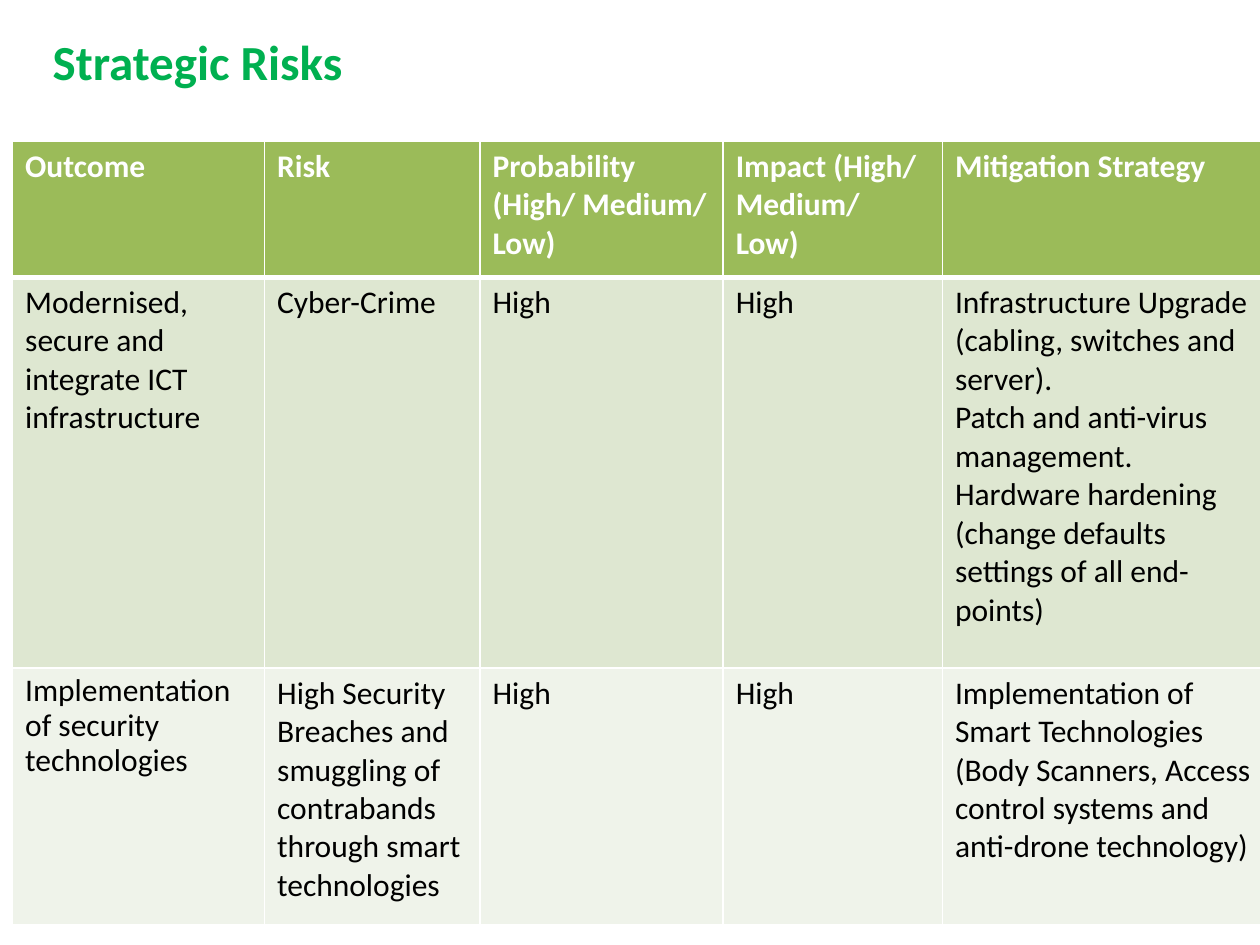
import pptx
import pptx.dml.color
import pptx.enum.text
import pptx.oxml
import pptx.oxml.ns
import pptx.util

SLIDE_WIDTH = pptx.util.Inches(10)
SLIDE_HEIGHT = pptx.util.Inches(7.5)
FONT_NAME = "Calibri"
COLUMN_SHARES = [0.2, 0.171, 0.193, 0.174, 0.262]
ROW_INCHES = [1.08, 3.1, 2.04]
ROW_FILLS = ["9BBB59", "DEE7D1", "EFF3EA"]
RISK_ROWS = [
    [
        "Outcome",
        "Risk",
        "Probability (High/ Medium/ Low)",
        "Impact (High/ Medium/ Low)",
        "Mitigation Strategy",
    ],
    [
        "Modernised, secure and integrate ICT infrastructure",
        "Cyber-Crime",
        "High",
        "High",
        "Infrastructure Upgrade (cabling, switches and server).\n"
        "Patch and anti-virus management.\n"
        "Hardware hardening (change defaults settings of all end-points)",
    ],
    [
        "Implementation of security technologies",
        "High Security Breaches and smuggling of contrabands through smart technologies",
        "High",
        "High",
        "Implementation of Smart Technologies (Body Scanners, Access control "
        "systems and anti-drone technology)",
    ],
]


def color(hex_code):
    """Return the RGB colour for a hex string."""
    return pptx.dml.color.RGBColor.from_string(hex_code)


def write_text(text_frame, text, size, hex_code, bold):
    """Fill a text frame and format all of its runs."""
    text_frame.text = text
    for paragraph in text_frame.paragraphs:
        for run in paragraph.runs:
            run.font.name = FONT_NAME
            run.font.size = pptx.util.Pt(size)
            run.font.bold = bold
            run.font.color.rgb = color(hex_code)


def add_title(slide, text):
    """Add the slide title as a text box."""
    shape = slide.shapes.add_textbox(
        pptx.util.Inches(0.32),
        pptx.util.Inches(0.2),
        pptx.util.Inches(9.45),
        pptx.util.Inches(0.57),
    )
    shape.text_frame.word_wrap = True
    shape.text_frame.auto_size = pptx.enum.text.MSO_AUTO_SIZE.SHAPE_TO_FIT_TEXT
    write_text(shape.text_frame, text, 28, "00B050", True)


def set_borders(cell, widths):
    """Draw white cell borders with a point width for each side."""
    properties = cell._tc.get_or_add_tcPr()
    for side, width in widths.items():
        properties.append(
            pptx.oxml.parse_xml(
                f'<a:ln{side} {pptx.oxml.ns.nsdecls("a")} w="{pptx.util.Pt(width)}">'
                '<a:solidFill><a:srgbClr val="FFFFFF"/></a:solidFill>'
                f"</a:ln{side}>"
            )
        )


def format_cell(cell, text, row_index):
    """Write one cell with the look of its row."""
    is_header = row_index == 0
    bottom = 3 if is_header else 1
    top = 3 if row_index == 1 else 1
    set_borders(cell, {"L": 1, "R": 1, "T": top, "B": bottom})
    cell.fill.solid()
    cell.fill.fore_color.rgb = color(ROW_FILLS[row_index])
    write_text(cell.text_frame, text, 18, "FFFFFF" if is_header else "000000", is_header)


def add_risk_table(slide):
    """Add the table of risks and return it."""
    frame = slide.shapes.add_table(
        len(RISK_ROWS),
        len(COLUMN_SHARES),
        pptx.util.Inches(0.1),
        pptx.util.Inches(1.12),
        SLIDE_WIDTH,
        pptx.util.Inches(sum(ROW_INCHES)),
    )
    table = frame.table
    for column, share in zip(table.columns, COLUMN_SHARES):
        column.width = int(SLIDE_WIDTH * share)
    for row_index, texts in enumerate(RISK_ROWS):
        table.rows[row_index].height = pptx.util.Inches(ROW_INCHES[row_index])
        for column_index, text in enumerate(texts):
            format_cell(table.cell(row_index, column_index), text, row_index)
    return table


def main():
    """Build and save the presentation."""
    presentation = pptx.Presentation()
    presentation.slide_width = SLIDE_WIDTH
    presentation.slide_height = SLIDE_HEIGHT
    slide = presentation.slides.add_slide(presentation.slide_layouts[6])
    add_title(slide, "Strategic Risks")
    table = add_risk_table(slide)
    technology_paragraph = table.cell(2, 0).text_frame.paragraphs[0]
    technology_paragraph.line_spacing = 0.9
    technology_paragraph.space_after = pptx.util.Pt(6)
    presentation.save("out.pptx")


if __name__ == "__main__":
    main()
